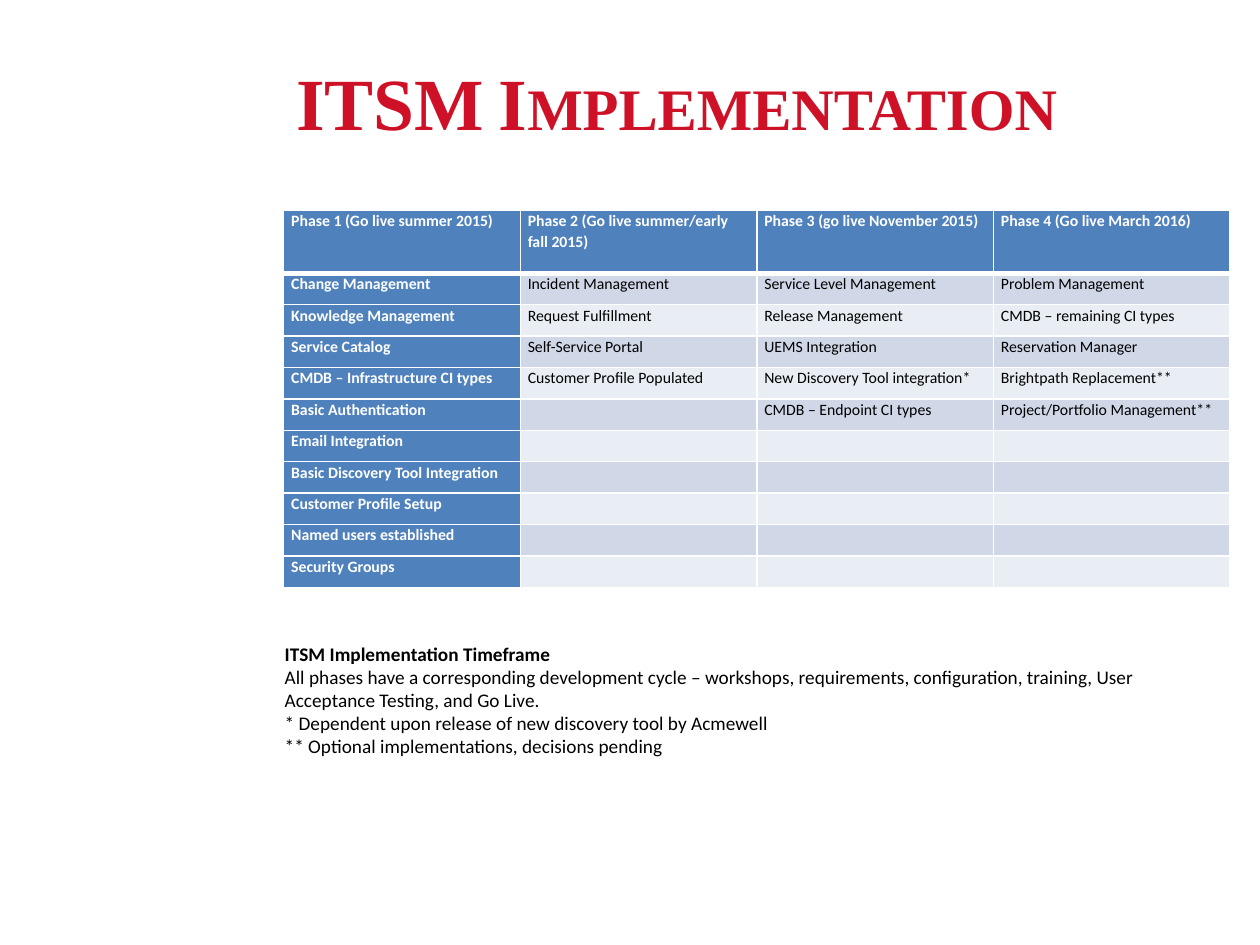
from lxml.etree import SubElement
from pptx import Presentation
from pptx.dml.color import RGBColor
from pptx.enum.text import MSO_ANCHOR, MSO_AUTO_SIZE, PP_ALIGN
from pptx.oxml import parse_xml
from pptx.oxml.ns import nsdecls, qn
from pptx.util import Cm, Pt

COLORS = {
    "title": "CE1126", "header": "4F81BD", "odd": "D0D8E8",
    "even": "E9EDF4", "white": "FFFFFF", "black": "000000",
}


def add_text(paragraph, text, color, **formats):
    run = paragraph.add_run()
    run.text = text
    run.font.color.rgb = RGBColor.from_string(COLORS[color])
    for name, value in formats.items():
        setattr(run.font, name, value)
    return run


def add_border(cell, position, side, width):
    # Border lines come before the fill in the cell properties
    line = parse_xml(
        f'<a:{side} {nsdecls("a")} w="{Pt(width)}"><a:solidFill>'
        f'<a:srgbClr val="{COLORS["white"]}"/></a:solidFill></a:{side}>')
    cell._tc.get_or_add_tcPr().insert(position, line)


presentation = Presentation()
presentation.slide_width, presentation.slide_height = Cm(25.4), Cm(19.05)
slide = presentation.slides.add_slide(presentation.slide_layouts[6])

# Title
title = slide.shapes.add_textbox(Cm(5.72), Cm(0.76), Cm(18.42), Cm(2.54))
title.text_frame.word_wrap = True
title.text_frame.vertical_anchor = MSO_ANCHOR.MIDDLE
title_run = add_text(title.text_frame.paragraphs[0], "ITSM Implementation", "title",
                     name="Times New Roman", size=Pt(42), bold=True)
title_run.font._element.set("cap", "small")

# Phase table: each phase is a column with its own list of items
phases = {
    "Phase 1 (Go live summer 2015)": [
        "Change Management", "Knowledge Management", "Service Catalog",
        "CMDB – Infrastructure CI types", "Basic Authentication",
        "Email Integration", "Basic Discovery Tool Integration",
        "Customer Profile Setup", "Named users established", "Security Groups"],
    "Phase 2 (Go live summer/early fall 2015)": [
        "Incident Management", "Request Fulfillment", "Self-Service Portal",
        "Customer Profile Populated"],
    "Phase 3 (go live November 2015)": [
        "Service Level Management", "Release Management", "UEMS Integration",
        "New Discovery Tool integration*", "CMDB – Endpoint CI types"],
    "Phase 4 (Go live March 2016)": [
        "Problem Management", "CMDB – remaining CI types", "Reservation Manager",
        "Brightpath Replacement**", "Project/Portfolio Management**"],
}
row_count = 1 + max(len(items) for items in phases.values())
table = slide.shapes.add_table(row_count, len(phases), Cm(5.72), Cm(4.24),
                               Cm(19.07), Cm(7.6)).table
for row_index, row in enumerate(table.rows):
    row.height = Cm(1.27) if row_index == 0 else Cm(0.633)

cell_format = {"margin_left": Cm(0.15), "margin_right": Cm(0.15),
               "margin_top": 0, "margin_bottom": 0}
for column_index, (phase, items) in enumerate(phases.items()):
    table.columns[column_index].width = Cm(4.77)
    texts = [phase] + items + [""] * (row_count - 1 - len(items))
    for row_index, text in enumerate(texts):
        cell = table.cell(row_index, column_index)
        for name, value in cell_format.items():
            setattr(cell, name, value)
        is_header = row_index == 0 or column_index == 0
        fill = "header" if is_header else ("odd" if row_index % 2 else "even")
        cell.fill.solid()
        cell.fill.fore_color.rgb = RGBColor.from_string(COLORS[fill])
        widths = {"lnL": 1, "lnR": 1, "lnT": 3 if row_index == 1 else 1,
                  "lnB": 3 if row_index == 0 else 1}
        for position, (side, width) in enumerate(widths.items()):
            add_border(cell, position, side, width)
        paragraph = cell.text_frame.paragraphs[0]
        paragraph.line_spacing = 1.07
        if text:
            add_text(paragraph, text, "white" if is_header else "black",
                     name="Calibri", size=Pt(9), bold=is_header)
        else:
            # Small end mark keeps empty rows from growing
            SubElement(paragraph._p, qn("a:endParaRPr"), sz="900")

# Timeframe notes
notes = [
    "ITSM Implementation Timeframe",
    "All phases have a corresponding development cycle – workshops, requirements, "
    "configuration, training, User Acceptance Testing, and Go Live.",
    "* Dependent upon release of new discovery tool by Acmewell",
    "** Optional implementations, decisions pending",
]
timeframe = slide.shapes.add_textbox(Cm(5.49), Cm(12.8), Cm(19), Cm(2.62))
frame = timeframe.text_frame
frame.word_wrap = True
frame.auto_size = MSO_AUTO_SIZE.SHAPE_TO_FIT_TEXT
frame.vertical_anchor = MSO_ANCHOR.MIDDLE
for index, note in enumerate(notes):
    paragraph = frame.add_paragraph() if index else frame.paragraphs[0]
    paragraph.alignment = PP_ALIGN.LEFT
    add_text(paragraph, note, "black", name="Calibri", size=Pt(11), bold=index == 0)

presentation.save("out.pptx")
